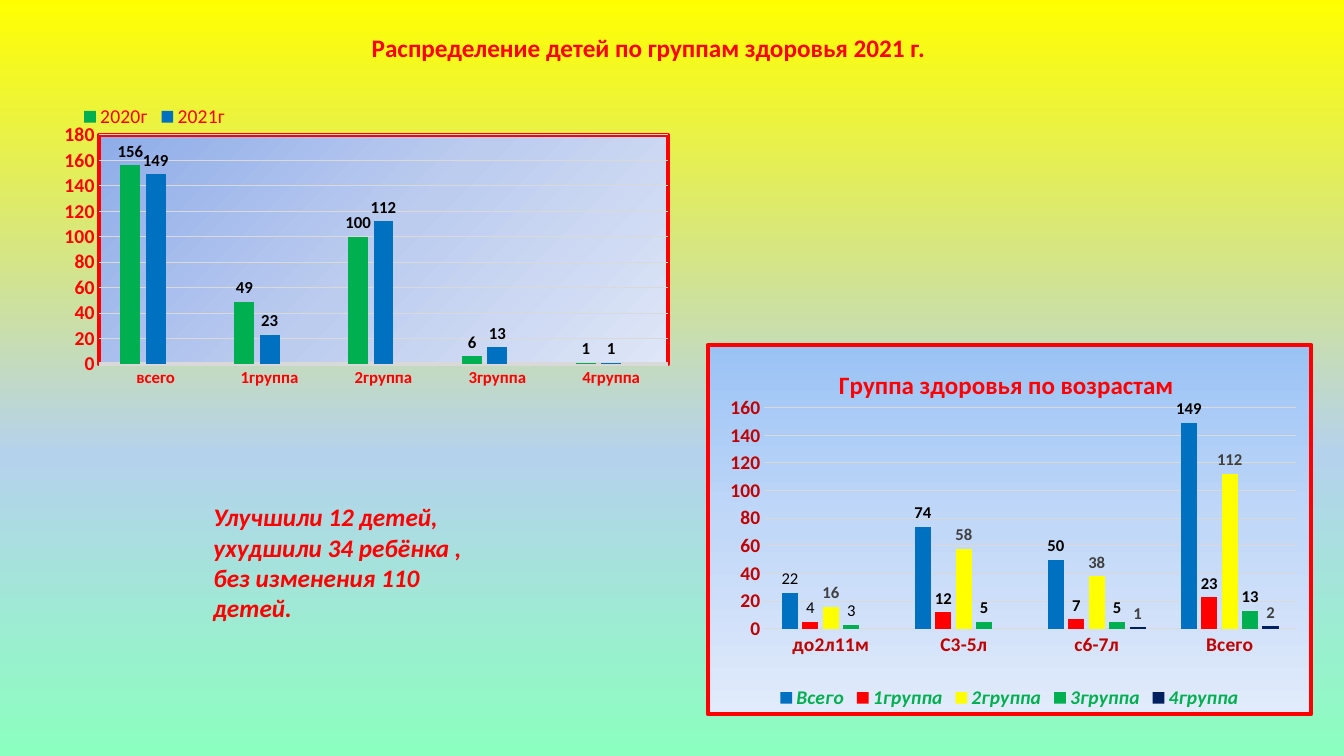
from lxml import etree
from pptx import Presentation
from pptx.chart.data import CategoryChartData
from pptx.dml.color import RGBColor
from pptx.enum.chart import XL_CHART_TYPE as ChartType
from pptx.enum.chart import XL_LABEL_POSITION as LabelPos
from pptx.enum.chart import XL_LEGEND_POSITION as LegendPos
from pptx.enum.chart import XL_TICK_MARK as Tick
from pptx.enum.text import PP_ALIGN as Align
from pptx.oxml import parse_xml
from pptx.oxml.ns import nsdecls, qn
from pptx.util import Cm, Pt

FONT = "Calibri"
RED = RGBColor(0xFF, 0x00, 0x00)
DARK_RED = RGBColor(0xC0, 0x00, 0x00)
GREEN = RGBColor(0x00, 0xB0, 0x50)
BLUE = RGBColor(0x00, 0x70, 0xC0)
YELLOW = RGBColor(0xFF, 0xFF, 0x00)
NAVY = RGBColor(0x00, 0x20, 0x60)
GRAY = RGBColor(0xA5, 0xA5, 0xA5)
GRID = RGBColor(0xD9, 0xD9, 0xD9)
BLACK = RGBColor(0x00, 0x00, 0x00)
DARK_GRAY = RGBColor(0x40, 0x40, 0x40)

# Gradient stops: (percent, colour)
PAGE_STOPS = [(0, YELLOW), (60, RGBColor(0xB5, 0xD2, 0xEC)),
              (100, RGBColor(0x8B, 0xFF, 0xBF))]
PLOT_STOPS = [(0, RGBColor(0x8F, 0xAD, 0xE9)), (50, RGBColor(0xBC, 0xCC, 0xEF)),
              (100, RGBColor(0xDE, 0xE6, 0xF7))]
AGES_STOPS = [(0, RGBColor(0x9A, 0xC3, 0xF5)), (50, RGBColor(0xC2, 0xD8, 0xF8)),
              (100, RGBColor(0xE1, 0xEB, 0xFB))]


def gradient(stops, angle):
    gs = "".join(f'<a:gs pos="{pos * 1000}"><a:srgbClr val="{color}"/></a:gs>'
                 for pos, color in stops)
    return parse_xml(f'<a:gradFill {nsdecls("a")} rotWithShape="1"><a:gsLst>{gs}</a:gsLst>'
                     f'<a:lin ang="{angle * 60000}" scaled="0"/></a:gradFill>')


def framed_area(stops, angle):
    """Chart area properties: gradient fill with a red 3 pt border."""
    sp_pr = parse_xml(f'<c:spPr {nsdecls("c", "a")}><a:ln w="{Pt(3)}"><a:solidFill>'
                      f'<a:srgbClr val="{RED}"/></a:solidFill></a:ln></c:spPr>')
    sp_pr.insert(0, gradient(stops, angle))
    return sp_pr


def set_layout(parent, index, inner=False, **fractions):
    """Place a chart part by fractions of the chart size (x, y, w, h)."""
    for old in parent.findall(qn("c:layout")):
        parent.remove(old)
    layout = etree.Element(qn("c:layout"))
    manual = etree.SubElement(layout, qn("c:manualLayout"))
    if inner:
        etree.SubElement(manual, qn("c:layoutTarget")).set("val", "inner")
    for key in "xy":
        etree.SubElement(manual, qn(f"c:{key}Mode")).set("val", "edge")
    for key, value in fractions.items():
        etree.SubElement(manual, qn(f"c:{key}")).set("val", str(value))
    parent.insert(index, layout)


def set_font(font, size, color, bold=False, italic=False):
    font.name, font.size = FONT, Pt(size)
    font.bold, font.italic = bold, italic
    font.color.rgb = color


def add_text(slide, box, text, align=Align.LEFT, **style):
    tf = slide.shapes.add_textbox(*map(Cm, box)).text_frame
    tf.word_wrap = True
    for i, line in enumerate(text.split("\n")):
        p = tf.paragraphs[0] if i == 0 else tf.add_paragraph()
        p.alignment = align
        r = p.add_run()
        r.text = line
        set_font(r.font, **style)


def style_axes(chart, color, cat_size, line_width, top):
    cat, val = chart.category_axis, chart.value_axis
    for axis, size in ((cat, cat_size), (val, 14)):
        axis.major_tick_mark = axis.minor_tick_mark = Tick.NONE
        set_font(axis.tick_labels.font, size, color, bold=True)
    cat.format.line.color.rgb = GRID
    cat.format.line.width = Pt(line_width)
    val.minimum_scale, val.maximum_scale, val.major_unit = 0, top, 20
    val.format.line.fill.background()
    val.major_gridlines.format.line.color.rgb = GRID
    val.major_gridlines.format.line.width = Pt(0.75)


def style_series(series, color, label_color, first_label):
    series.format.fill.solid()
    series.format.fill.fore_color.rgb = color
    if label_color is None:
        return
    labels = series.data_labels
    labels.show_value = True
    labels.position = LabelPos.OUTSIDE_END
    set_font(labels.font, 12, label_color, bold=True)
    if first_label:
        label = series.points[0].data_label
        r = label.text_frame.paragraphs[0].add_run()
        r.text = first_label
        set_font(r.font, 12, BLACK)
        label.position = LabelPos.OUTSIDE_END


def add_columns(slide, box, categories, rows, plot_box):
    """rows: (name, values, colour, label colour, own text of first label)."""
    data = CategoryChartData()
    data.categories = categories
    for name, values, *_ in rows:
        data.add_series(name, values)
    chart = slide.shapes.add_chart(ChartType.COLUMN_CLUSTERED, *map(Cm, box), data).chart
    set_font(chart.font, 10, BLACK)
    chart.has_title = False
    plot = chart.plots[0]
    plot.gap_width, plot.overlap, plot.vary_by_categories = 219, -27, False
    for series, (_, _, *style) in zip(plot.series, rows):
        style_series(series, *style)
    set_layout(plot_area(chart), 0, inner=True, **dict(zip("xywh", plot_box)))
    return chart


def plot_area(chart):
    return chart.element.find(".//" + qn("c:plotArea"))


def add_legend(chart, **style):
    chart.has_legend = True
    chart.legend.position = LegendPos.BOTTOM
    chart.legend.include_in_layout = False
    set_font(chart.legend.font, 14, **style)


def add_years_chart(slide):
    rows = [("2020г", (156, 49, 100, 6, 1), GREEN, BLACK, None),
            ("2021г", (149, 23, 112, 13, 1), BLUE, BLACK, None),
            ("Series 3", (None,) * 5, GRAY, None, None)]
    groups = ["всего"] + [f"{n}группа" for n in range(1, 5)]
    chart = add_columns(slide, (1.4, 2.46, 17.83, 8.79), groups, rows,
                        (0.061, 0.107, 0.805, 0.657))
    style_axes(chart, RED, cat_size=12, line_width=3, top=180)
    plot_area(chart).append(framed_area(PLOT_STOPS, 45))

    # Legend above the plot, without the empty series
    add_legend(chart, color=RED)
    legend = chart.element.find(".//" + qn("c:legend"))
    legend.insert(1, parse_xml(f'<c:legendEntry {nsdecls("c")}><c:idx val="2"/>'
                               '<c:delete val="1"/></c:legendEntry>'))
    set_layout(legend, 2, x=0.03, y=0.01, w=0.22, h=0.09)


def add_ages_chart(slide):
    rows = [("Всего", (26, 74, 50, 149), BLUE, BLACK, "22"),
            ("1группа", (5, 12, 7, 23), RED, BLACK, "4"),
            ("2группа", (16, 58, 38, 112), YELLOW, DARK_GRAY, None),
            ("3группа", (3, 5, 5, 13), GREEN, BLACK, "3"),
            ("4группа", (None, None, 1, 2), NAVY, DARK_GRAY, None)]
    chart = add_columns(slide, (17.78, 8.64, 15.32, 9.4),
                        ["до2л11м", "С3-5л", "с6-7л", "Всего"], rows,
                        (0.094, 0.17, 0.881, 0.6))
    style_axes(chart, DARK_RED, cat_size=14, line_width=0.75, top=160)
    add_legend(chart, color=GREEN, bold=True, italic=True)
    chart.element.find(qn("c:chart")).addnext(framed_area(AGES_STOPS, 90))

    # Chart title
    r = chart.chart_title.text_frame.paragraphs[0].add_run()
    r.text = "Группа здоровья по возрастам"
    set_font(r.font, 18, RED, bold=True)
    set_layout(chart.element.find(".//" + qn("c:title")), 1, x=0.21, y=0.05)


def main():
    prs = Presentation()
    prs.slide_width, prs.slide_height = Cm(33.87), Cm(19.05)
    slide = prs.slides.add_slide(prs.slide_layouts[6])

    # Background
    slide.background.fill.solid()
    bg = slide.element.find(".//" + qn("p:bgPr"))
    bg.replace(bg[0], gradient(PAGE_STOPS, 90))

    # Title, charts and conclusion
    add_text(slide, (8.46, 0.69, 15.77, 1.02),
             "Распределение детей по группам здоровья 2021 г.",
             align=Align.CENTER, size=18, color=RED, bold=True)
    add_years_chart(slide)
    add_ages_chart(slide)
    add_text(slide, (5.13, 12.52, 7.42, 3.33),
             "Улучшили 12 детей, ухудшили 34 ребёнка ,\nбез изменения 110 детей.",
             size=18, color=RED, bold=True, italic=True)
    prs.save("out.pptx")


if __name__ == "__main__":
    main()
